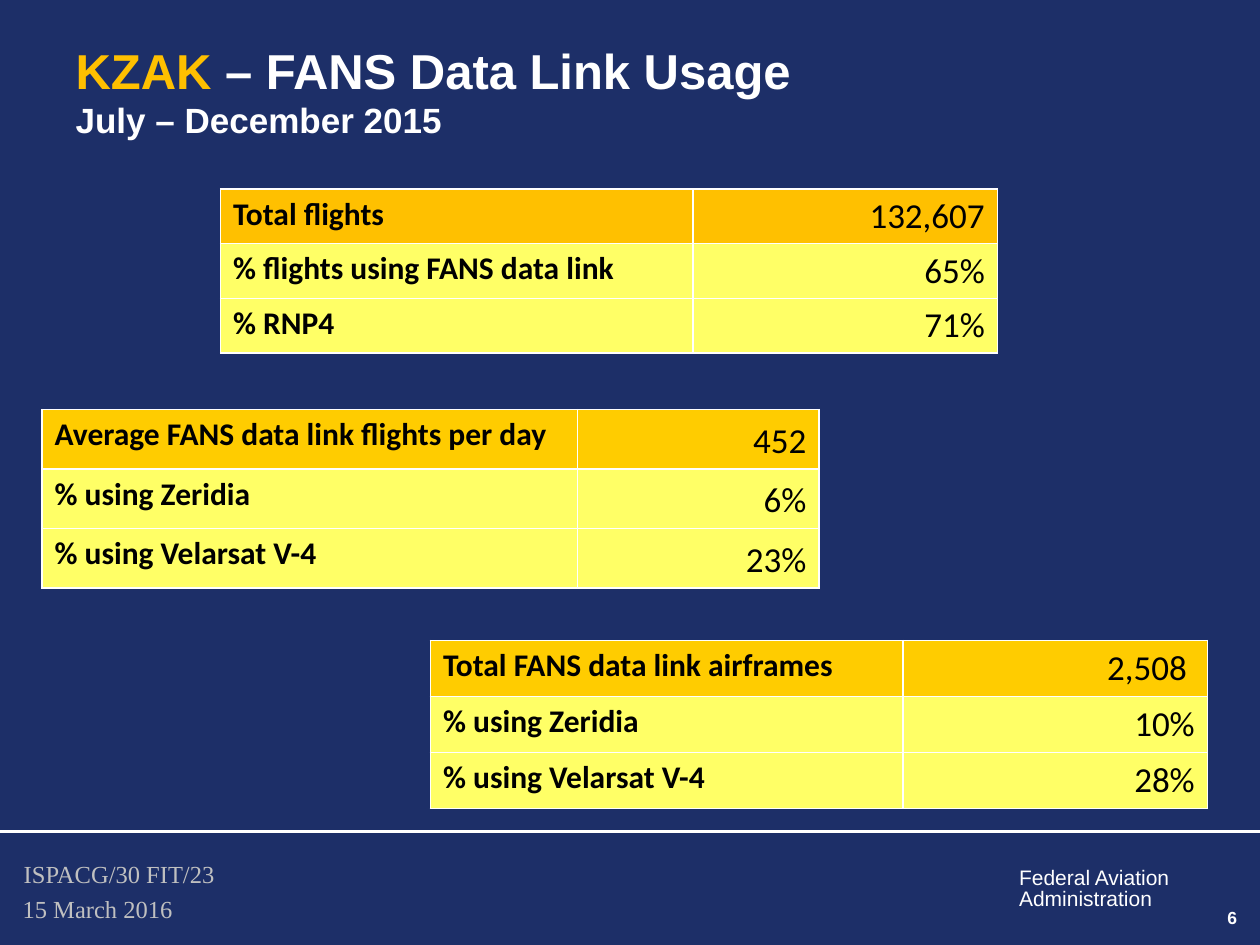
from dataclasses import dataclass

from lxml import etree
from pptx import Presentation
from pptx.dml.color import RGBColor
from pptx.enum.shapes import MSO_CONNECTOR
from pptx.enum.text import MSO_ANCHOR, PP_ALIGN
from pptx.oxml.ns import qn
from pptx.util import Pt

LEFT, RIGHT = PP_ALIGN.LEFT, PP_ALIGN.RIGHT
TOP, MIDDLE, BOTTOM = MSO_ANCHOR.TOP, MSO_ANCHOR.MIDDLE, MSO_ANCHOR.BOTTOM
STRAIGHT = MSO_CONNECTOR.STRAIGHT
TITLE_ONLY = 5

COLORS = {
    "navy": "1D2F68",
    "white": "FFFFFF",
    "black": "000000",
    "silver": "C0C0C0",
    "amber": "FFC000",
    "gold": "FFCC00",
    "yellow": "FFFF66",
}


@dataclass
class Label:
    lines: list[str]
    left: float
    top: float
    width: float
    height: float
    size: float
    font: str = "Arial"
    color: str = "white"
    bold: bool = False
    align: PP_ALIGN = LEFT
    spacing: float = 1.0
    wrap: bool = True


@dataclass
class UsageTable:
    left: float
    top: float
    columns: tuple[float, float]
    row_height: float
    header: str
    value_anchor: MSO_ANCHOR
    rows: list[tuple[str, str]]


LABELS = [
    Label(["Federal Aviation", "Administration"], 575.3, 492.5, 100.8, 31.7, 12,
          spacing=0.85, wrap=False),
    Label(["ISPACG/30 FIT/23"], 6.5, 487.5, 376.5, 24.5, 14, "Times New Roman", "silver"),
    Label(["15 March 2016"], 5.8, 507.5, 294.5, 24.5, 14, "Times New Roman", "silver"),
    Label(["6"], 594, 514.8, 120, 22, 10, bold=True, align=RIGHT),
]

TABLES = [
    UsageTable(126, 108, (270, 174), 31.2, "amber", BOTTOM, [
        ("Total flights", "132,607"),
        ("% flights using FANS data link", "65%"),
        ("% RNP4", "71%"),
    ]),
    UsageTable(24, 234, (306, 138), 34, "gold", BOTTOM, [
        ("Average FANS data link flights per day", "452"),
        ("% using Zeridia", "6%"),
        ("% using Velarsat V-4", "23%"),
    ]),
    UsageTable(246, 366, (270, 174), 32, "gold", MIDDLE, [
        ("Total FANS data link airframes", "2,508 "),
        ("% using Zeridia", "10%"),
        ("% using Velarsat V-4", "28%"),
    ]),
]


def rgb(name: str) -> RGBColor:
    return RGBColor.from_string(COLORS[name])


def style(font, name: str, size: float, color: str, bold: bool) -> None:
    font.name, font.size, font.bold = name, Pt(size), bold
    font.color.rgb = rgb(color)


def add_title(page) -> None:
    title = page.shapes.title
    title.left, title.top, title.width, title.height = Pt(36), Pt(30), Pt(648), Pt(43.5)
    title.text_frame.vertical_anchor = MIDDLE
    para = title.text_frame.paragraphs[0]
    para.alignment = LEFT
    for text, size, color in [("KZAK", 28, "amber"),
                              (" – FANS Data Link Usage", 28, "white"),
                              ("July – December 2015", 20, "white")]:
        if size == 20:
            para.add_line_break()
        span = para.add_run()
        span.text = text
        style(span.font, "Arial", size, color, True)


def add_label(page, label: Label) -> None:
    box = page.shapes.add_textbox(Pt(label.left), Pt(label.top),
                                  Pt(label.width), Pt(label.height))
    frame = box.text_frame
    frame.word_wrap = label.wrap
    for index, line in enumerate(label.lines):
        para = frame.add_paragraph() if index else frame.paragraphs[0]
        para.text = line
        para.alignment = label.align
        para.line_spacing = label.spacing
        style(para.font, label.font, label.size, label.color, label.bold)


def add_footer_rule(page) -> None:
    rule = page.shapes.add_connector(STRAIGHT, Pt(0), Pt(475.2), Pt(720), Pt(475.2))
    rule.line.color.rgb = rgb("white")
    rule.line.width = Pt(1.5)
    etree.SubElement(rule._element.spPr, qn("a:effectLst"))


def add_borders(cell) -> None:
    """Draw a thin white line on all four sides; borders must precede the cell fill."""
    properties = cell._tc.get_or_add_tcPr()
    for side in ("a:lnL", "a:lnR", "a:lnT", "a:lnB"):
        border = etree.SubElement(properties, qn(side), w=str(Pt(1)))
        fill = etree.SubElement(border, qn("a:solidFill"))
        etree.SubElement(fill, qn("a:srgbClr"), val=COLORS["white"])


def add_usage_table(page, usage: UsageTable) -> None:
    table = page.shapes.add_table(
        len(usage.rows), len(usage.columns), Pt(usage.left), Pt(usage.top),
        Pt(sum(usage.columns)), Pt(usage.row_height * len(usage.rows))).table
    for column, width in zip(table.columns, usage.columns):
        column.width = Pt(width)
    for row_index, texts in enumerate(usage.rows):
        for column_index, text in enumerate(texts):
            is_value = column_index == 1
            cell = table.cell(row_index, column_index)
            add_borders(cell)
            cell.fill.solid()
            cell.fill.fore_color.rgb = rgb("yellow" if row_index else usage.header)
            cell.vertical_anchor = usage.value_anchor if is_value else TOP
            cell.text = text
            para = cell.text_frame.paragraphs[0]
            para.alignment = RIGHT if is_value else LEFT
            style(para.font, "Calibri", 20 if is_value else 18, "black", not is_value)


def main() -> None:
    deck = Presentation()
    deck.slide_width, deck.slide_height = Pt(720), Pt(540)
    page = deck.slides.add_slide(deck.slide_layouts[TITLE_ONLY])
    page.background.fill.solid()
    page.background.fill.fore_color.rgb = rgb("navy")
    add_footer_rule(page)
    add_title(page)
    for label in LABELS:
        add_label(page, label)
    for usage in TABLES:
        add_usage_table(page, usage)
    deck.save("out.pptx")


if __name__ == "__main__":
    main()
